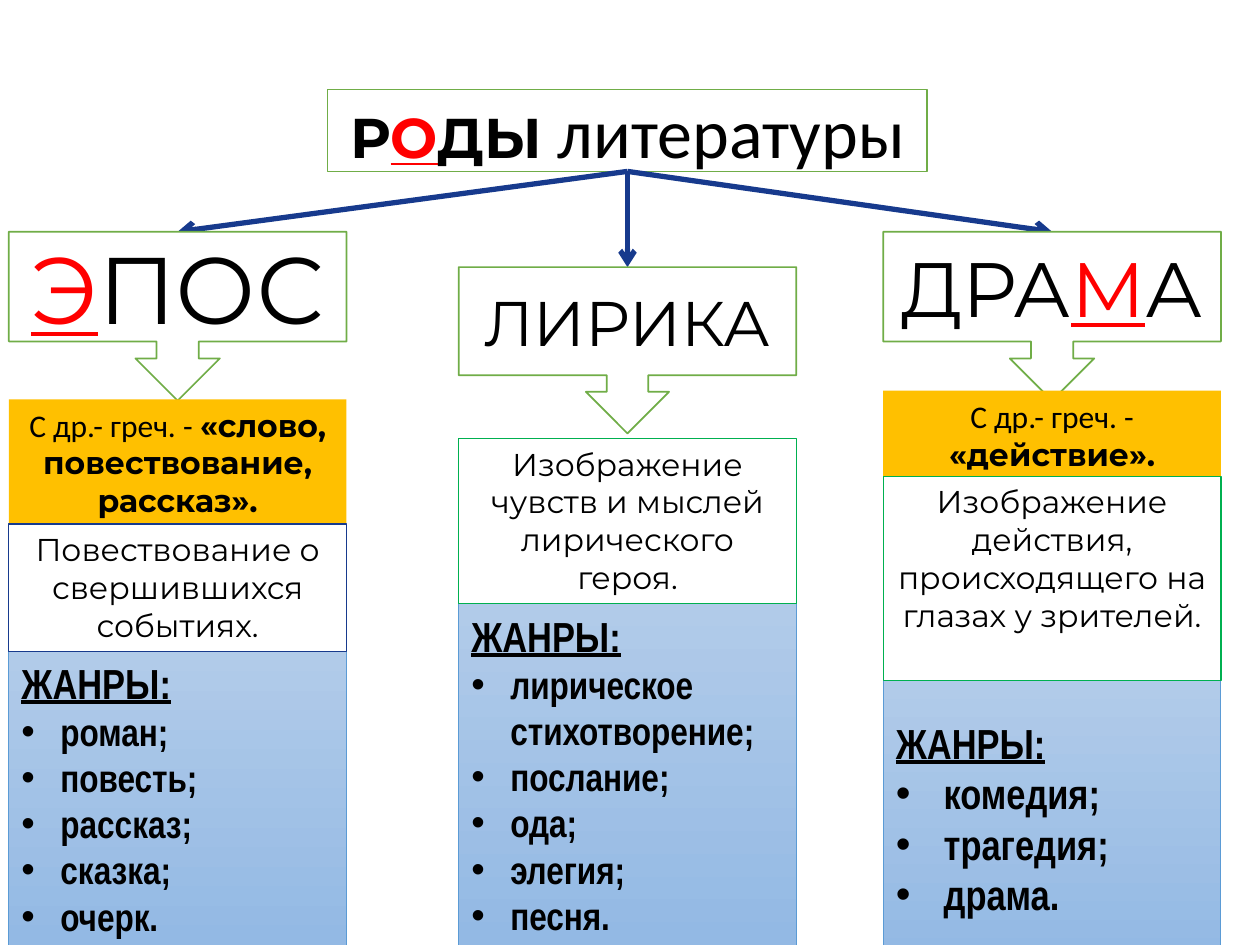
from lxml.etree import SubElement
from pptx import Presentation
from pptx.dml.color import RGBColor
from pptx.enum.shapes import MSO_CONNECTOR, MSO_SHAPE
from pptx.enum.text import MSO_ANCHOR, MSO_AUTO_SIZE, PP_ALIGN
from pptx.oxml.ns import qn
from pptx.util import Inches, Pt

BLACK = RGBColor(0x00, 0x00, 0x00)
WHITE = RGBColor(0xFF, 0xFF, 0xFF)
RED = RGBColor(0xFF, 0x00, 0x00)
GOLD = RGBColor(0xFF, 0xC0, 0x00)
LEAF = RGBColor(0x70, 0xAD, 0x47)
GREEN = RGBColor(0x00, 0xB0, 0x50)
NAVY = RGBColor(0x17, 0x3A, 0x8D)
BLUE = RGBColor(0x5B, 0x9B, 0xD5)
PALE = RGBColor(0xB1, 0xCB, 0xE9)
DEEP = RGBColor(0x93, 0xB9, 0xE4)

WIDE, HIGH = Inches(10), Inches(7.5)
COL, ROW = WIDE / 100, HIGH / 100  # grid of 100 columns and 100 rows
SPAN = 26.8

MONT, CALI, SLIM = "Montserrat", "Calibri", "Arial Narrow"
PLAIN = {"name": MONT, "size": Pt(18), "bold": False, "underline": False}
GREEK = PLAIN | {"name": CALI}
STRONG = PLAIN | {"bold": True}
HEAD = {"name": SLIM, "size": Pt(24), "bold": True, "underline": True}

# Rows of each part are (offset from column top, height).
KINDS = [
    {"left": 0.7, "top": 24.53, "call": 17.87, "size": 54,
     "name": ("", "Э", "ПОС"),
     "root": (17.74, 13.47, "«слово, повествование, рассказ»."),
     "gist": (30.94, 13.47, "Повествование о свершившихся событиях.", WHITE, NAVY),
     "list": (44.4, 31.07, 22, 0.31,
              ["роман;", "повесть;", "рассказ;", "сказка;", "очерк."])},
    {"left": 36.4, "top": 28.27, "call": 17.6, "size": 36,
     "name": ("ЛИРИКА", "", ""),
     "root": None,
     "gist": (18.13, 17.47, "Изображение чувств и мыслей лирического героя.",
              None, GREEN),
     "list": (35.6, 36.13, 22, 0.31,
              ["лирическое стихотворение;", "послание;", "ода;", "элегия;", "песня."])},
    {"left": 70.1, "top": 24.53, "call": 17.87, "size": 44,
     "name": ("ДРА", "М", "А"),
     "root": (16.8, 9.47, "«действие»."),
     "gist": (25.87, 21.6, "Изображение действия, происходящего на глазах у зрителей.",
              WHITE, GREEN),
     "list": (47.47, 29.2, 24, 0.38, ["комедия;", "трагедия;", "драма."])},
]


def grid(x, y, w, h):
    return int(x * COL), int(y * ROW), int(w * COL), int(h * ROW)


def place(shape, box):
    shape.left, shape.top, shape.width, shape.height = grid(*box)


def paint(shape, fill, line, width):
    if fill is None:
        shape.fill.background()
    else:
        shape.fill.solid()
        shape.fill.fore_color.rgb = fill
    if line is None:
        shape.line.fill.background()
    else:
        shape.line.color.rgb = line
        shape.line.width = Pt(width)


def write(para, runs, align=PP_ALIGN.CENTER):
    """Fill a paragraph with (text, format, colour) runs."""
    para.alignment = align
    para.space_before = Pt(0)
    for text, form, tint in runs:
        if text:
            run = para.add_run()
            run.text = text
            for key, value in form.items():
                setattr(run.font, key, value)
            run.font.color.rgb = tint


def frame(shape, anchor):
    text = shape.text_frame
    text.word_wrap = True
    text.auto_size = MSO_AUTO_SIZE.NONE
    text.vertical_anchor = anchor
    return text


def stress(parts, form):
    """Give runs whose middle part is red and underlined."""
    first, mark, rest = parts
    return [(first, form, BLACK), (mark, form | {"underline": True}, RED),
            (rest, form, BLACK)]


def panel(slide, preset, box, runs, look, anchor=MSO_ANCHOR.TOP):
    shape = slide.shapes.add_shape(preset, *grid(*box))
    shape.shadow.inherit = False
    paint(shape, *look)
    write(frame(shape, anchor).paragraphs[0], runs)
    return shape


def title(shape, box):
    place(shape, box)
    paint(shape, WHITE, LEAF, 1)
    bold = STRONG | {"size": Pt(32)}
    runs = stress(("Р", "О", "ДЫ"), bold)
    runs.append((" литературы", GREEK | {"size": Pt(40)}, BLACK))
    write(frame(shape, MSO_ANCHOR.MIDDLE).paragraphs[0], runs)


def bullet(para, indent):
    """Set a hanging bullet, or none when the indent is zero."""
    props = para._p.get_or_add_pPr()
    props.set("marL", str(Inches(indent)))
    props.set("indent", str(-Inches(indent)))
    if indent:
        SubElement(props, qn("a:buFont"), typeface="Arial")
        SubElement(props, qn("a:buChar"), char="•")
    else:
        SubElement(props, qn("a:buNone"))


def genres(shape, box, size, indent, items):
    place(shape, box)
    shape.fill.gradient()
    shape.fill.gradient_angle = 270
    for stop, tint, spot in zip(shape.fill.gradient_stops, (PALE, DEEP), (0, 1)):
        stop.color.rgb = tint
        stop.position = spot
    shape.line.color.rgb = BLUE
    shape.line.width = Pt(0.5)
    text = frame(shape, MSO_ANCHOR.MIDDLE)
    item = HEAD | {"size": Pt(size), "underline": False}
    lines = [("ЖАНРЫ:", HEAD, 0)] + [(word, item, indent) for word in items]
    for num, (word, form, inset) in enumerate(lines):
        para = text.add_paragraph() if num else text.paragraphs[0]
        write(para, [(word, form, BLACK)], PP_ALIGN.LEFT)
        bullet(para, inset)


def column(slide, kind, body):
    """Build one kind of literature and return its callout."""
    left, top = kind["left"], kind["top"]

    def part(down, high):
        return left, top + down, SPAN, high

    name = stress(kind["name"], PLAIN | {"size": Pt(kind["size"])})
    call = panel(slide, MSO_SHAPE.DOWN_ARROW_CALLOUT, part(0, kind["call"]),
                 name, (WHITE, LEAF, 1), MSO_ANCHOR.MIDDLE)
    if kind["root"]:
        down, high, sense = kind["root"]
        runs = [("С др.- греч. - ", GREEK, BLACK), (sense, STRONG, BLACK)]
        panel(slide, MSO_SHAPE.RECTANGLE, part(down, high), runs, (GOLD, None, 0))
    down, high, gist, fill, line = kind["gist"]
    panel(slide, MSO_SHAPE.RECTANGLE, part(down, high),
          [(gist, PLAIN, BLACK)], (fill, line, 0.75))
    down, high, *rest = kind["list"]
    genres(body, part(down, high), *rest)
    return call


def arrow(slide):
    wire = slide.shapes.add_connector(MSO_CONNECTOR.STRAIGHT, 0, 0, 0, 0)
    wire.line.color.rgb = NAVY
    wire.line.width = Pt(3)
    SubElement(wire.line._get_or_add_ln(), qn("a:tailEnd"), type="arrow")
    SubElement(wire._element.spPr, qn("a:effectLst"))
    return wire


def main():
    deck = Presentation()
    deck.slide_width, deck.slide_height = WIDE, HIGH
    slide = deck.slides.add_slide(deck.slide_layouts[4])
    head, *bodies, spare = slide.placeholders
    spare._element.getparent().remove(spare._element)
    title(head, (26, 9.47, 47.6, 8.67))
    wires = [arrow(slide) for _ in KINDS]
    for wire, kind, body in zip(wires, KINDS, bodies):
        call = column(slide, kind, body)
        wire.begin_connect(head, 2)
        wire.end_connect(call, 0)
    deck.save("out.pptx")


if __name__ == "__main__":
    main()
